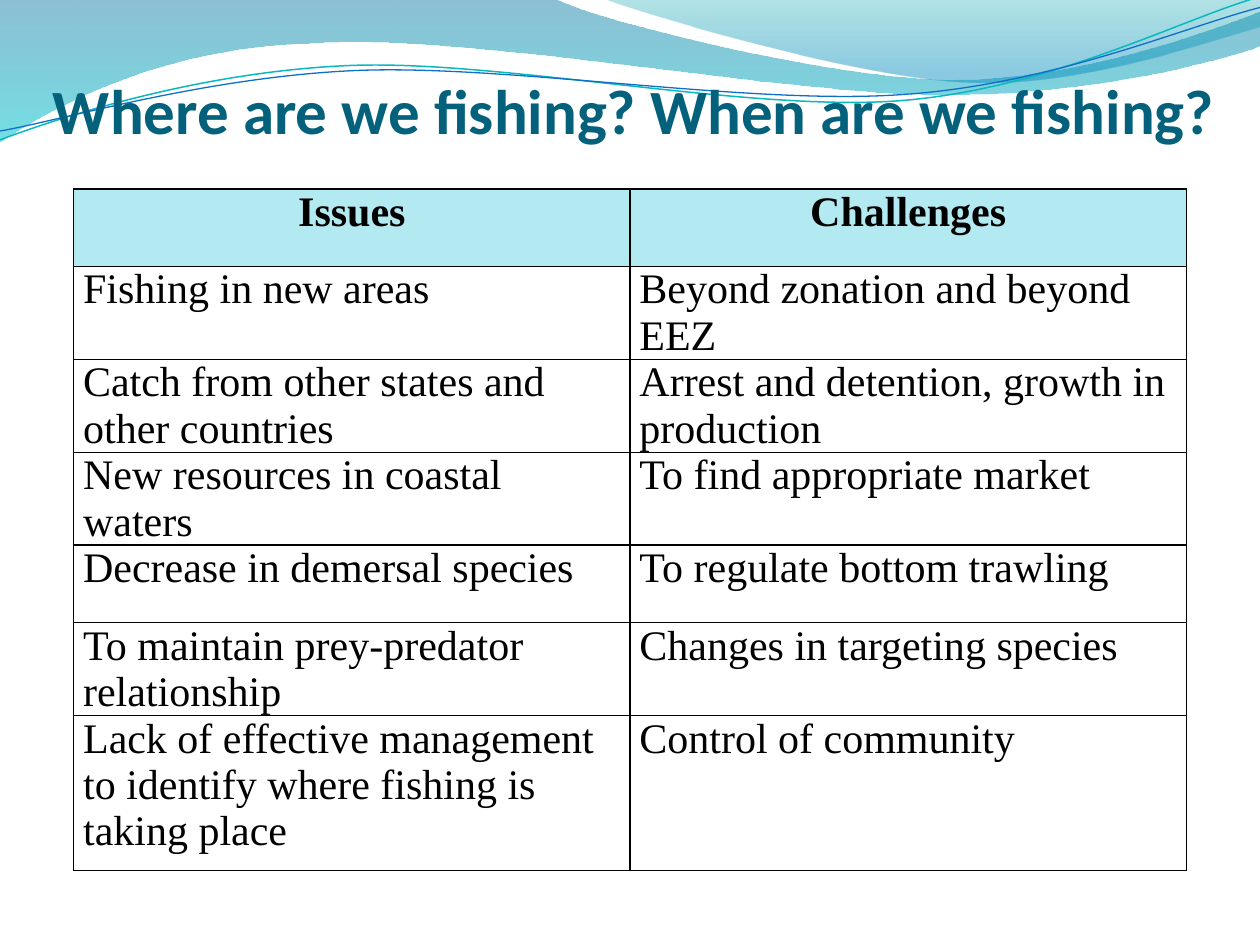
"""Build a slide with a wave banner, a title and a table of fishing issues and challenges."""
import math

from lxml import etree
from pptx import Presentation, util as u
from pptx.dml.color import RGBColor
from pptx.enum import text
from pptx.oxml.ns import qn

TITLE = "Where are we fishing? When are we fishing?"
ROWS = [
    ("Issues", "Challenges"),
    ("Fishing in new areas", "Beyond zonation and beyond EEZ"),
    ("Catch from other states and other countries", "Arrest and detention, growth in production"),
    ("New resources in coastal waters", "To find appropriate market"),
    ("Decrease in demersal species", "To regulate bottom trawling"),
    ("To maintain prey-predator relationship", "Changes in targeting species"),
    ("Lack of effective management to identify where fishing is taking place", "Control of community"),
]

TITLE_COLOR = RGBColor(0x04, 0x61, 0x7B)
HEADER_FILL = RGBColor(0xB3, 0xEA, 0xF2)
BLACK = RGBColor(0, 0, 0)
TEAL = RGBColor(0x0A, 0xB8, 0xBF)
BLUE = RGBColor(0x0F, 0x6F, 0xC6)

SLIDE_WIDTH, SLIDE_HEIGHT = 10, 7.5
TABLE_WIDTH, TABLE_TOP, LAST_ROW_HEIGHT = 8.83, 1.5, 1.23
STRAND_TILT = -2.7

WAVES = [
    ([(0, 0), (4.4, -0.01),
      (4.76, 0.17, 6.64, 0.63, 7.58, 0.63), (8.53, 0.63, 9.58, 0.26, 10, 0.09),
      (10.01, 0.36),
      (9.83, 0.44, 8.7, 0.76, 7.46, 0.75), (6.22, 0.75, 3.82, 0.28, 2.57, 0.34),
      (1.29, 0.36, 0.46, 0.83, -0.01, 1.13), (0, 0)],
     [(0, RGBColor(0x00, 0x74, 0xA1), 45), (100, RGBColor(0x00, 0xC6, 0xCF), 55)]),
    ([(4.79, -0.01),
      (5.09, 0.11, 6.82, 0.62, 7.69, 0.65), (8.56, 0.69, 9.61, 0.32, 10, 0.21),
      (10, 0), (4.79, -0.01)],
     [(0, RGBColor(0x00, 0xA1, 0xA9), 30), (80, RGBColor(0x00, 0x8B, 0xBF), 45)]),
]
STRANDS = [
    ([(0, 1.11), (0.48, 0.93, 1.58, 0.57, 2.77, 0.52),
      (3.95, 0.47, 5.93, 0.89, 7.13, 0.8), (8.33, 0.71, 9.38, 0.15, 9.98, -0.02)],
     (4.99, 0.58), TEAL, 0.85),
    ([(0, 1.04), (0.47, 0.96, 1.64, 0.61, 2.83, 0.56),
      (4.03, 0.51, 5.97, 0.84, 7.17, 0.75), (8.36, 0.67, 9.41, 0.21, 10, 0.06)],
     (5, 0.59), BLUE, 0.75),
]


def turn(segment, center, degrees):
    """Turn the points of a segment clockwise about a center."""
    sine, cosine = math.sin(math.radians(degrees)), math.cos(math.radians(degrees))
    turned = []
    for x, y in zip(segment[::2], segment[1::2]):
        across, down = x - center[0], y - center[1]
        turned += [center[0] + across * cosine - down * sine, center[1] + across * sine + down * cosine]
    return turned


def add_outline(slide, segments, close):
    """Add a freeform whose six-number segments are cubic curves."""
    points = [(u.Inches(x), u.Inches(y)) for segment in segments
              for x, y in zip(segment[::2], segment[1::2])]
    builder = slide.shapes.build_freeform(*points[0])
    builder.add_line_segments(points[1:], close=close)
    shape = builder.convert_to_shape()
    shape.shadow.inherit = False
    steps = iter(shape.element.findall(".//" + qn("a:lnTo")))
    for segment in segments[1:]:
        first = next(steps)
        if len(segment) == 6:
            first.tag = qn("a:cubicBezTo")
            for _ in range(2):
                step = next(steps)
                first.append(step[0])
                step.getparent().remove(step)
    return shape


def add_wave(slide, segments, stops):
    """Add a filled wave with a translucent vertical gradient."""
    shape = add_outline(slide, segments, True)
    shape.line.fill.background()
    shape.fill.gradient()
    shape.fill.gradient_angle = 270
    elements = shape.element.spPr.findall(".//" + qn("a:gs"))
    for stop, element, (position, color, opacity) in zip(shape.fill.gradient_stops, elements, stops):
        stop.position = position / 100
        stop.color.rgb = color
        etree.SubElement(element[0], qn("a:alpha"), val=str(opacity * 1000))


def add_strand(slide, segments, center, color, width):
    """Add a thin open curve as a tilted shape."""
    level = [turn(segment, center, -STRAND_TILT) for segment in segments]
    shape = add_outline(slide, level, False)
    shape.rotation = STRAND_TILT
    shape.fill.background()
    shape.line.color.rgb = color
    shape.line.width = u.Pt(width)


def style_font(font, name, size, color, bold):
    """Set the main properties of a font."""
    font.name, font.size, font.bold = name, u.Pt(size), bold
    font.color.rgb = color


def place_title(slide):
    """Format the title and bring it in front of the waves."""
    title = slide.shapes.title
    title.left, title.top, title.width, title.height = map(u.Inches, (0.42, 0.42, 9.42, 0.75))
    frame = title.text_frame
    frame.text = TITLE
    frame.word_wrap = True
    frame.auto_size = text.MSO_AUTO_SIZE.NONE
    frame.vertical_anchor = text.MSO_ANCHOR.BOTTOM
    frame.margin_left = frame.margin_right = frame.margin_bottom = 0
    paragraph = frame.paragraphs[0]
    paragraph.alignment = text.PP_ALIGN.LEFT
    style_font(paragraph.font, "Calibri", 36, TITLE_COLOR, True)
    slide.shapes.element.append(title.element)


def add_borders(cell):
    """Draw a black one-point line on each side of a cell."""
    properties = cell._tc.get_or_add_tcPr()
    for index, side in enumerate(("lnL", "lnR", "lnT", "lnB")):
        line = etree.Element(qn("a:" + side), w=str(u.Pt(1)))
        fill = etree.SubElement(line, qn("a:solidFill"))
        etree.SubElement(fill, qn("a:srgbClr"), val=str(BLACK))
        properties.insert(index, line)


def add_issue_table(slide):
    """Add the centered two-column table with a tinted header row."""
    row_height = u.Inches(LAST_ROW_HEIGHT / 2)
    left = u.Inches((SLIDE_WIDTH - TABLE_WIDTH) / 2)
    frame = slide.shapes.add_table(len(ROWS), 2, left, u.Inches(TABLE_TOP),
                                   u.Inches(TABLE_WIDTH), row_height * (len(ROWS) + 1))
    table = frame.table
    table.horz_banding = False
    for row_index, row in enumerate(ROWS):
        header = row_index == 0
        table.rows[row_index].height = row_height * (2 if row is ROWS[-1] else 1)
        for column_index, wording in enumerate(row):
            cell = table.cell(row_index, column_index)
            cell.text = wording
            cell.margin_left = cell.margin_right = u.Pt(5.4)
            cell.margin_top = cell.margin_bottom = 0
            if header:
                cell.fill.solid()
                cell.fill.fore_color.rgb = HEADER_FILL
            else:
                cell.fill.background()
            paragraph = cell.text_frame.paragraphs[0]
            paragraph.alignment = text.PP_ALIGN.CENTER if header else text.PP_ALIGN.LEFT
            style_font(paragraph.font, "Times New Roman", 24, BLACK, header)
            add_borders(cell)


def main():
    """Assemble and save the slide."""
    presentation = Presentation()
    presentation.slide_width = u.Inches(SLIDE_WIDTH)
    presentation.slide_height = u.Inches(SLIDE_HEIGHT)
    slide = presentation.slides.add_slide(presentation.slide_layouts[5])
    for wave in WAVES:
        add_wave(slide, *wave)
    for strand in STRANDS:
        add_strand(slide, *strand)
    place_title(slide)
    add_issue_table(slide)
    presentation.save("out.pptx")


if __name__ == "__main__":
    main()
